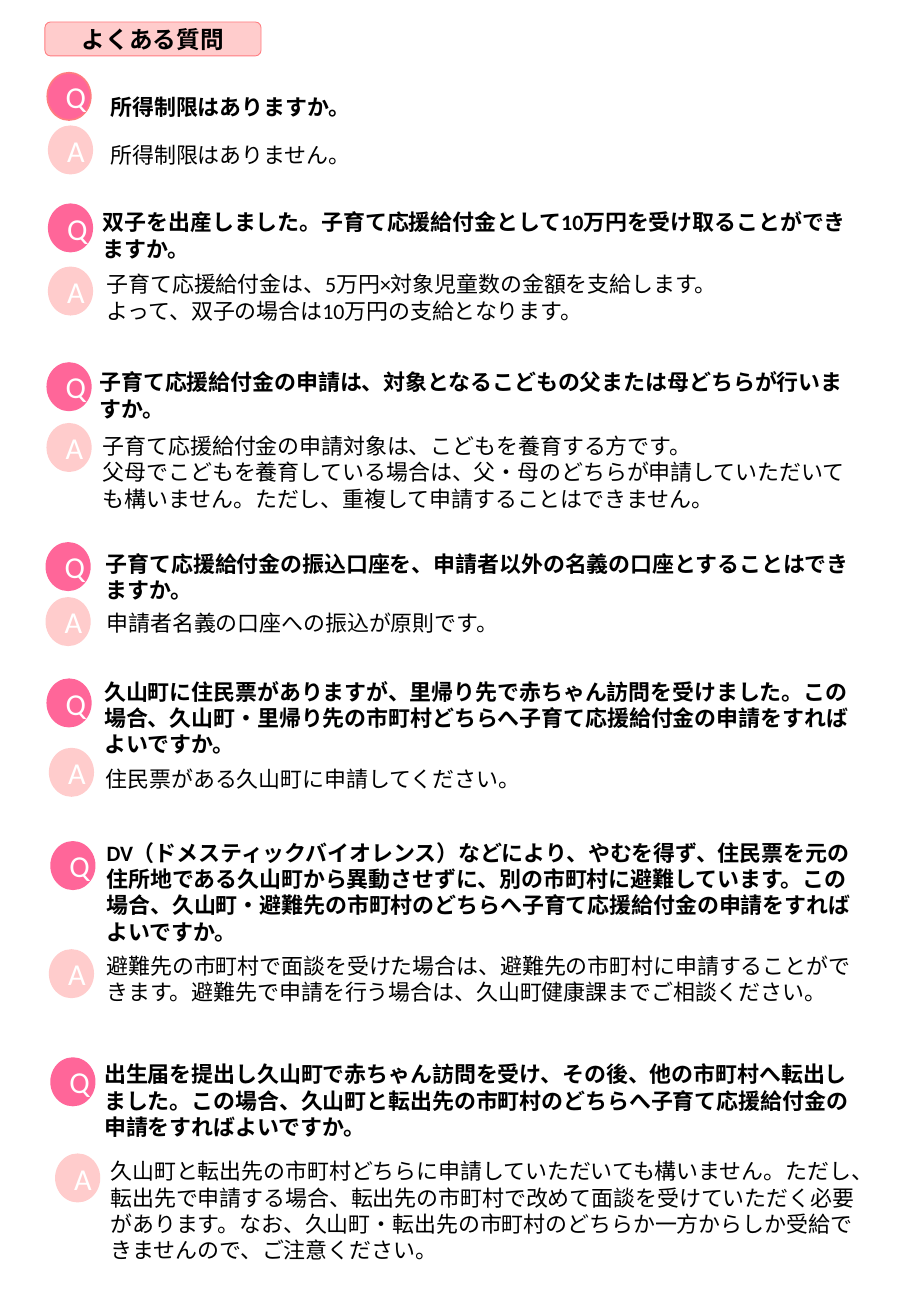
from pptx import Presentation
from pptx.dml.color import RGBColor
from pptx.enum.shapes import MSO_SHAPE as Shape
from pptx.enum.text import MSO_ANCHOR as Anchor, MSO_AUTO_SIZE as AutoSize, PP_ALIGN as Align
from pptx.util import Cm, Pt

FONT = "Calibri"
BLACK, WHITE = "000000", "FFFFFF"
PINK, PALE, CORAL = "FF6699", "FFCCCC", "FF7C80"
BADGE_FILLS = {"Q": PINK, "A": PALE}
BADGE_SIZE = (0.91, 0.99)
TITLE = "よくある質問"
NARROW, WIDE = 9.6, 16.2

# kind, badge (left, top), text (left, top, width), line count, paragraphs; lengths in cm
ENTRIES = [
    ("Q", (0.99, 1.52), (2.06, 1.83, NARROW), 1, ["所得制限はありますか。"]),
    ("A", (1.02, 2.64), (2.06, 2.84, NARROW), 1, ["所得制限はありません。"]),
    ("Q", (1.02, 4.27), (1.9, 4.24, 16.26), 2,
     ["双子を出産しました。子育て応援給付金として10万円を受け取ることができますか。"]),
    ("A", (1.02, 5.59), (1.98, 5.54, WIDE), 2,
     ["子育て応援給付金は、5万円×対象児童数の金額を支給します。",
      "よって、双子の場合は10万円の支給となります。"]),
    ("Q", (0.99, 7.59), (1.83, 7.59, 16.31), 2,
     ["子育て応援給付金の申請は、対象となるこどもの父または母どちらが行いますか。"]),
    ("A", (0.99, 8.86), (1.9, 8.92, WIDE), 3,
     ["子育て応援給付金の申請対象は、こどもを養育する方です。",
      "父母でこどもを養育している場合は、父・母のどちらが申請していただいても"
      "構いません。ただし、重複して申請することはできません。"]),
    ("Q", (0.97, 11.35), (1.96, 11.38, WIDE), 2,
     ["子育て応援給付金の振込口座を、申請者以外の名義の口座とすることはできますか。"]),
    ("A", (0.97, 12.5), (1.98, 12.62, WIDE), 1, ["申請者名義の口座への振込が原則です。"]),
    ("Q", (0.99, 14.2), (1.93, 14.05, WIDE), 3,
     ["久山町に住民票がありますが、里帰り先で赤ちゃん訪問を受けました。この場合、"
      "久山町・里帰り先の市町村どちらへ子育て応援給付金の申請をすればよいですか。"]),
    ("A", (1.04, 15.65), (1.96, 15.88, WIDE), 1, ["住民票がある久山町に申請してください。"]),
    ("Q", (1.07, 17.6), (1.98, 17.42, WIDE), 4,
     ["DV（ドメスティックバイオレンス）などにより、やむを得ず、住民票を元の"
      "住所地である久山町から異動させずに、別の市町村に避難しています。この場合、"
      "久山町・避難先の市町村のどちらへ子育て応援給付金の申請をすればよいですか。"]),
    ("A", (1.04, 19.86), (1.98, 19.79, WIDE), 2,
     ["避難先の市町村で面談を受けた場合は、避難先の市町村に申請することができます。"
      "避難先で申請を行う場合は、久山町健康課までご相談ください。"]),
    ("Q", (1.07, 22.12), (1.93, 22.05, WIDE), 3,
     ["出生届を提出し久山町で赤ちゃん訪問を受け、その後、他の市町村へ転出しました。"
      "この場合、久山町と転出先の市町村のどちらへ子育て応援給付金の申請をすればよいですか。"]),
    ("A", (1.17, 24.13), (2.06, 24.08, WIDE), 4,
     ["久山町と転出先の市町村どちらに申請していただいても構いません。ただし、"
      "転出先で申請する場合、転出先の市町村で改めて面談を受けていただく必要があります。"
      "なお、久山町・転出先の市町村のどちらか一方からしか受給できませんので、ご注意ください。"]),
]


def color(value):
    return RGBColor.from_string(value)


def set_text(frame, paragraphs, size, text_color, bold=False, align=Align.LEFT):
    frame.word_wrap = True
    frame.text = "\n".join(paragraphs)
    for paragraph in frame.paragraphs:
        paragraph.alignment = align
        paragraph.font.name = FONT
        paragraph.font.size = Pt(size)
        paragraph.font.bold = bold
        paragraph.font.color.rgb = color(text_color)


def add_label(slide, kind, box, fill, line, line_width, text, size, text_color, bold=False):
    """Add a filled shape with centred text."""
    shape = slide.shapes.add_shape(kind, *map(Cm, box))
    shape.shadow.inherit = False
    shape.fill.solid()
    shape.fill.fore_color.rgb = color(fill)
    shape.line.color.rgb = color(line)
    shape.line.width = Pt(line_width)
    shape.text_frame.vertical_anchor = Anchor.MIDDLE
    set_text(shape.text_frame, [text], size, text_color, bold, Align.CENTER)


def add_entry_text(slide, left, top, width, lines, paragraphs, bold):
    height = 0.25 + 0.56 * lines
    frame = slide.shapes.add_textbox(Cm(left), Cm(top), Cm(width), Cm(height)).text_frame
    set_text(frame, paragraphs, 13, BLACK, bold)
    frame.auto_size = AutoSize.SHAPE_TO_FIT_TEXT


def main():
    presentation = Presentation()
    presentation.slide_width, presentation.slide_height = Cm(19.05), Cm(27.51)
    slide = presentation.slides.add_slide(presentation.slide_layouts[6])

    add_label(slide, Shape.ROUNDED_RECTANGLE, (0.94, 0.46, 4.52, 0.71),
              PALE, CORAL, 0.5, TITLE, 14, BLACK, bold=True)
    for index, (kind, badge, (left, top, width), lines, paragraphs) in enumerate(ENTRIES):
        fill = BADGE_FILLS[kind]
        outline = CORAL if index == 0 else fill
        add_label(slide, Shape.OVAL, badge + BADGE_SIZE, fill, outline, 1, kind, 18, WHITE)
        add_entry_text(slide, left, top, width, lines, paragraphs, bold=kind == "Q")

    presentation.save("out.pptx")


if __name__ == "__main__":
    main()
